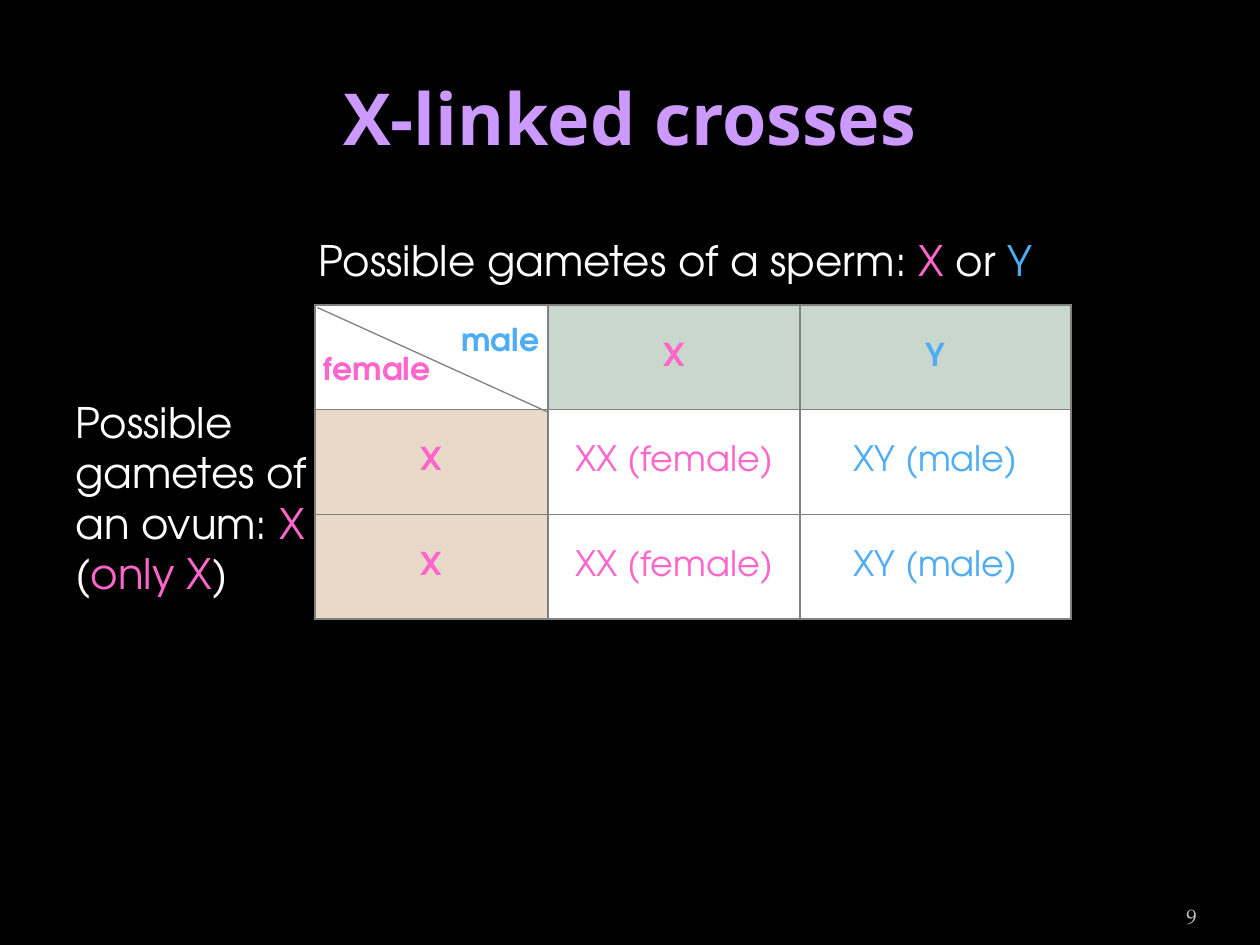
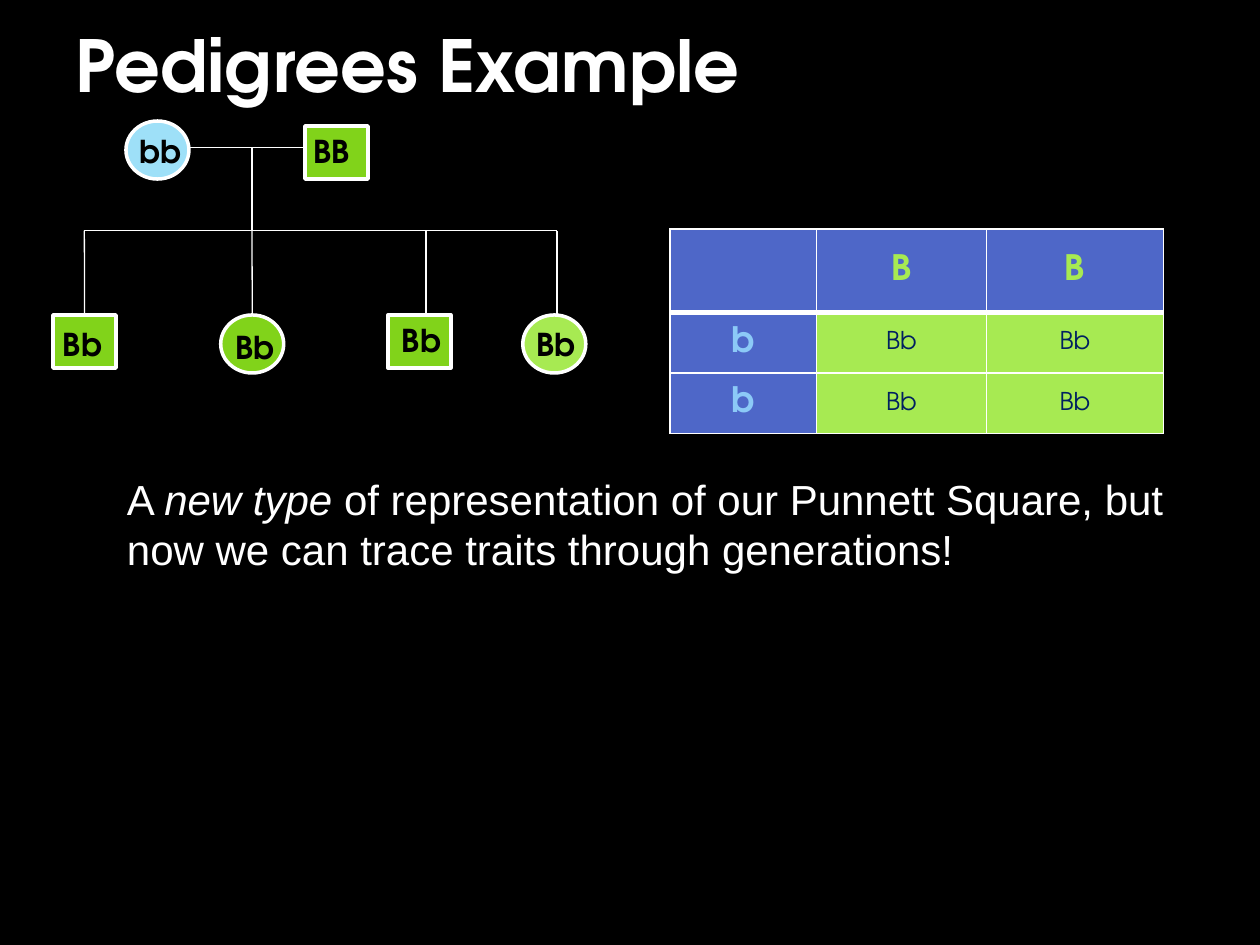
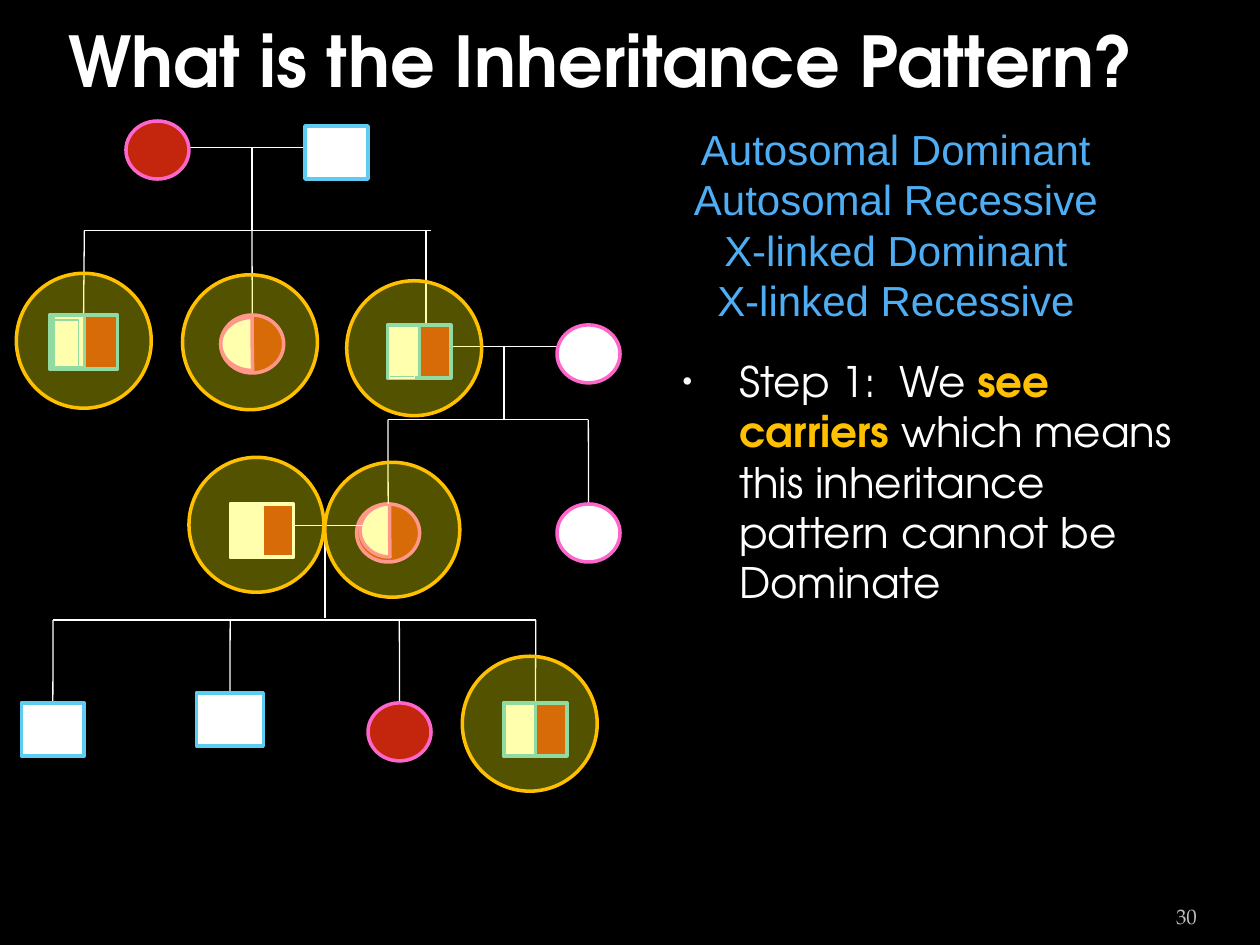
from dataclasses import dataclass

from lxml.etree import SubElement
from pptx import Presentation
from pptx.dml.color import RGBColor
from pptx.enum.shapes import MSO_CONNECTOR, MSO_SHAPE
from pptx.enum.text import MSO_ANCHOR, MSO_AUTO_SIZE, PP_ALIGN
from pptx.oxml.ns import qn
from pptx.shapes.autoshape import Shape
from pptx.shapes.connector import Connector
from pptx.slide import Slide
from pptx.table import Table, _Cell
from pptx.text.text import TextFrame
from pptx.util import Cm, Pt

SANS, SERIF, PLAIN, HEAD = "TeX Gyre Adventor", "TeX Gyre Pagella", "Arial", "Open Sans"
BLACK, WHITE, GRAY, SILVER = "000000", "FFFFFF", "808080", "BDBDBD"
PINK, BLUE, NAVY, LILAC = "FF66CC", "4FADF3", "002060", "CC99FF"
SAGE, SAND, ROYAL, PALE = "CAD7CD", "E9D9C9", "4E67C8", "8CC9F7"
GREEN, LIME, SKY = "81D31A", "A7EA52", "9EE0F8"
RED, CYAN, GOLD, YELLOW = "C3260C", "5ECBF1", "FFC000", "FFFF00"
LEFT, MID, RIGHT = PP_ALIGN.LEFT, PP_ALIGN.CENTER, PP_ALIGN.RIGHT
RECT, OVAL, PIE = MSO_SHAPE.RECTANGLE, MSO_SHAPE.OVAL, MSO_SHAPE.PIE
WIDE, TALL, ROUND = 1.27, 1.07, 1.17
HALF = 0.64
NEAR = 0.05


@dataclass
class Run:
    text: str
    color: str = WHITE
    size: float = 24
    font: str = SANS
    bold: bool = False
    italic: bool = False


@dataclass
class Para:
    runs: list[Run]
    align: PP_ALIGN = LEFT


@dataclass
class Box:
    x: float
    y: float
    w: float
    h: float


@dataclass
class Mark:
    """A symbol of the pedigree."""
    kind: MSO_SHAPE
    x: float
    y: float
    fill: str | None
    edge: str
    w: float = WIDE
    h: float = TALL
    width: float = 2
    alpha: int = 100


@dataclass
class Wire:
    x1: float
    y1: float
    x2: float
    y2: float
    color: str = WHITE


@dataclass
class Cell:
    paras: list[Para]
    fill: str


def rgb(code: str) -> RGBColor:
    return RGBColor.from_string(code)


def cms(box: Box | Mark) -> tuple[Cm, Cm, Cm, Cm]:
    return Cm(box.x), Cm(box.y), Cm(box.w), Cm(box.h)


def write(frame: TextFrame, paras: list[Para]) -> None:
    for i, para in enumerate(paras):
        line = frame.add_paragraph() if i else frame.paragraphs[0]
        line.alignment = para.align
        for part in para.runs:
            run = line.add_run()
            run.text = part.text
            font = run.font
            font.name, font.size = part.font, Pt(part.size)
            font.bold, font.italic = part.bold, part.italic
            font.color.rgb = rgb(part.color)


def add_text(slide: Slide, box: Box, paras: list[Para],
             wrap: bool = True, grow: bool = True) -> TextFrame:
    frame = slide.shapes.add_textbox(*cms(box)).text_frame
    frame.word_wrap = wrap
    if grow:
        frame.auto_size = MSO_AUTO_SIZE.SHAPE_TO_FIT_TEXT
    write(frame, paras)
    return frame


def add_title(slide: Slide, box: Box, para: Para) -> None:
    title = slide.shapes.title
    title.left, title.top, title.width, title.height = cms(box)
    frame = title.text_frame
    frame.auto_size = MSO_AUTO_SIZE.NONE
    frame.vertical_anchor = MSO_ANCHOR.MIDDLE
    write(frame, [para])


def add_number(slide: Slide, text: str) -> None:
    run = Run(text, SILVER, 12, SERIF)
    frame = add_text(slide, Box(22.02, 17.83, 2.11, 1.02), [Para([run], RIGHT)], grow=False)
    frame.margin_left = frame.margin_right = 0
    frame.vertical_anchor = MSO_ANCHOR.BOTTOM


def add_mark(slide: Slide, mark: Mark) -> Shape:
    shape = slide.shapes.add_shape(mark.kind, *cms(mark))
    shape.shadow.inherit = False
    if mark.kind == PIE:
        shape.adjustments[0], shape.adjustments[1] = 53.48, 162
    if mark.fill:
        shape.fill.solid()
        shape.fill.fore_color.rgb = rgb(mark.fill)
    else:
        shape.fill.background()
    if mark.alpha < 100:
        color = shape._element.spPr.find(qn("a:solidFill"))[0]
        SubElement(color, qn("a:alpha")).set("val", str(mark.alpha * 1000))
    shape.line.color.rgb = rgb(mark.edge)
    shape.line.width = Pt(mark.width)
    return shape


def add_wire(slide: Slide, wire: Wire) -> Connector:
    ends = [Cm(v) for v in (wire.x1, wire.y1, wire.x2, wire.y2)]
    line = slide.shapes.add_connector(MSO_CONNECTOR.STRAIGHT, *ends)
    line.line.color.rgb = rgb(wire.color)
    line.line.width = Pt(0.75)
    SubElement(line._element.spPr, qn("a:effectLst"))
    return line


def add_tree(slide: Slide, back: list[Mark], wires: list[Wire], front: list[Mark]) -> None:
    """Draw a pedigree and join each wire that ends at the top middle of a symbol."""
    nodes = [(mark, add_mark(slide, mark)) for mark in back]
    lines = [(wire, add_wire(slide, wire)) for wire in wires]
    nodes += [(mark, add_mark(slide, mark)) for mark in front]
    for wire, line in lines:
        for mark, shape in nodes:
            dx, dy = mark.x + mark.w / 2 - wire.x2, mark.y - wire.y2
            if abs(dx) < NEAR and abs(dy) < NEAR:
                line.end_connect(shape, 0)
                break


def set_edges(cell: _Cell, color: str, top: float, base: float) -> None:
    props = cell._tc.get_or_add_tcPr()
    for i, (side, width) in enumerate((("L", 1), ("R", 1), ("T", top), ("B", base))):
        edge = SubElement(props, qn(f"a:ln{side}"), w=str(Pt(width)))
        fill = SubElement(edge, qn("a:solidFill"))
        SubElement(fill, qn("a:srgbClr"), val=color)
        props.insert(i, edge)


def add_grid(slide: Slide, x: float, y: float, cols: list[float], rows: list[float],
             cells: list[list[Cell]], color: str, rule: float = 1) -> Table:
    """Draw a table; rule is the width of the line under its first row."""
    box = Box(x, y, sum(cols), sum(rows))
    table = slide.shapes.add_table(len(rows), len(cols), *cms(box)).table
    table.first_row = table.horz_banding = False
    for col, width in zip(table.columns, cols):
        col.width = Cm(width)
    for r, (row, high) in enumerate(zip(table.rows, rows)):
        row.height = Cm(high)
        for cell, data in zip(row.cells, cells[r]):
            cell.margin_left = cell.margin_right = Cm(0.18)
            cell.margin_top = cell.margin_bottom = 0
            cell.vertical_anchor = MSO_ANCHOR.MIDDLE
            cell.fill.solid()
            cell.fill.fore_color.rgb = rgb(data.fill)
            set_edges(cell, color, rule if r == 1 else 1, rule if r == 0 else 1)
            write(cell.text_frame, data.paras)
    return table


def set_bullet(frame: TextFrame) -> None:
    props = frame.paragraphs[0]._p.get_or_add_pPr()
    props.set("marL", str(Cm(1.52)))
    props.set("indent", str(Cm(-1.14)))
    SubElement(SubElement(props, qn("a:buClr")), qn("a:srgbClr"), val="F9F9F9")
    SubElement(props, qn("a:buSzPct"), val="65000")
    SubElement(props, qn("a:buFont"), typeface=PLAIN)
    SubElement(props, qn("a:buChar"), char="•")


def word(text: str, color: str, fill: str, size: float, bold: bool = True) -> Cell:
    return Cell([Para([Run(text, color, size, bold=bold)], MID)], fill)


def square(x: float, y: float, fill: str, edge: str = WHITE, w: float = WIDE) -> Mark:
    return Mark(RECT, x, y, fill, edge, w)


def circle(x: float, y: float, fill: str, edge: str = WHITE) -> Mark:
    return Mark(OVAL, x, y, fill, edge, h=ROUND)


def carrier(x: float, y: float, edge: str = CYAN) -> list[Mark]:
    return [square(x, y, RED, edge), square(x, y, WHITE, edge, HALF)]


def drops(y1: float, y2: float, *xs: float) -> list[Wire]:
    return [Wire(x, y1, x, y2) for x in xs]


FAMILY = [
    Wire(5.08, 2.97, 5.08, 4.65),
    Wire(1.7, 4.65, 8.69, 4.65),
    *drops(4.65, 6.35, 1.7, 5.08),
    Wire(8.59, 4.65, 8.59, 6.68),
    Wire(3.38, 2.97, 7.19, 2.97),
]


def crosses(slide: Slide) -> None:
    add_title(slide, Box(1.27, 0.76, 22.86, 3.18),
              Para([Run("X-linked crosses", LILAC, 41, HEAD, True)], MID))
    corner = Cell([Para([Run("male", BLUE, 18, bold=True)], RIGHT),
                   Para([Run("female", PINK, 18, bold=True)])], WHITE)
    child = [word("X", PINK, SAND, 18), word("XX (female)", PINK, WHITE, 20, False),
             word("XY (male)", BLUE, WHITE, 20, False)]
    top = [corner, word("X", PINK, SAGE, 18), word("Y", BLUE, SAGE, 18)]
    add_grid(slide, 6.35, 6.15, [4.7, 5.08, 5.46], [2.11] * 3, [top, child, child], GRAY)
    add_wire(slide, Wire(11.05, 8.31, 6.4, 6.2, GRAY))
    add_number(slide, "9")
    add_text(slide, Box(6.17, 4.6, 15.57, 1.27), [Para([
        Run("Possible gametes of a sperm: "), Run("X", PINK), Run(" or "), Run("Y", BLUE)])])
    add_text(slide, Box(1.27, 7.87, 5.69, 5.38), [Para([
        Run("Possible gametes of an ovum: "), Run("X", PINK), Run(" ("),
        Run("only X", PINK), Run(")")])])


def example(slide: Slide) -> None:
    add_title(slide, Box(1.27, 0.05, 22.86, 2.46),
              Para([Run("Pedigrees Example", size=41, bold=True)]))
    wires = FAMILY + [Wire(8.69, 4.65, 11.23, 4.65), *drops(4.65, 6.45, 11.23)]
    add_tree(slide, [], wires, [
        square(1.07, 6.35, GREEN), square(6.15, 2.54, GREEN), circle(2.54, 2.44, SKY),
        square(7.82, 6.35, GREEN), circle(10.54, 6.35, LIME), circle(4.45, 6.35, GREEN)])
    for text, x, y, w in (("bb", 2.57, 2.54, 1.4), ("BB", 6.07, 2.54, 1.24),
                          ("Bb", 4.5, 6.48, 1.32), ("Bb", 1.02, 6.43, 1.32),
                          ("Bb", 7.85, 6.35, 1.32), ("Bb", 10.57, 6.43, 1.32)):
        add_text(slide, Box(x, y, w, 1.02), [Para([Run(text, BLACK, 18, bold=True)])], wrap=False)
    gene = word("B", LIME, ROYAL, 20)
    child = [word("b", PALE, ROYAL, 20)] + [word("Bb", NAVY, LIME, 14, False)] * 2
    add_grid(slide, 13.51, 4.62, [2.95, 3.43, 3.56], [1.68, 1.22, 1.22],
             [[Cell([], ROYAL), gene, gene], child, child], WHITE, 3)
    add_text(slide, Box(2.31, 9.42, 21.41, 2.31), [Para([
        Run("A ", font=PLAIN), Run("new type ", font=PLAIN, italic=True),
        Run("of representation of our Punnett Square, but now we can trace traits "
            "through generations!", font=PLAIN)])])


def pattern(slide: Slide) -> None:
    add_title(slide, Box(1.12, -0.03, 22.86, 2.46),
              Para([Run("What is the Inheritance Pattern?", size=40, bold=True)]))
    back = [circle(7.19, 10.16, RED, PINK),
            Mark(PIE, 7.26, 10.16, WHITE, PINK, 1.19)]
    wires = FAMILY + [
        Wire(10.16, 6.99, 10.16, 8.46),
        Wire(7.82, 8.46, 11.86, 8.46),
        *drops(8.46, 10.16, 7.82, 11.86),
        Wire(9.09, 6.99, 11.63, 6.99),
        Wire(5.92, 10.59, 7.62, 10.59),
        Wire(6.55, 10.59, 6.55, 12.45),
        Wire(1.07, 12.5, 10.8, 12.5),
        *drops(12.5, 14.17, 1.07, 8.05, 10.8),
        *drops(12.5, 13.97, 4.64),
    ]
    front = [
        circle(2.54, 2.44, RED, PINK), square(6.15, 2.54, WHITE, CYAN),
        Mark(RECT, 1, 6.35, RED, CYAN, 1.37, 1.09), square(1.07, 6.35, WHITE, CYAN, HALF),
        circle(4.45, 6.35, RED, PINK), Mark(PIE, 4.45, 6.4, WHITE, PINK),
        *carrier(7.82, 6.55), circle(11.23, 6.55, WHITE, PINK),
        *carrier(4.65, 10.16, WHITE), circle(11.23, 10.16, WHITE, PINK),
        square(0.43, 14.17, WHITE, CYAN), square(3.96, 13.97, WHITE, CYAN, 1.35),
        circle(7.42, 14.17, RED, PINK), *carrier(10.16, 14.17),
        Mark(RECT, 1.07, 6.45, None, CYAN, 0.51, 1.02, 0.75),
        Mark(RECT, 7.85, 6.6, None, WHITE, 0.51, 1.02, 0.75),
    ]
    add_tree(slide, back, wires, front)
    add_number(slide, "30")
    kinds = ("Autosomal Dominant", "Autosomal Recessive",
             "X-linked Dominant", "X-linked Recessive")
    add_text(slide, Box(13.69, 2.36, 8.74, 4.37),
             [Para([Run(kind, BLUE, font=PLAIN)], MID) for kind in kinds], wrap=False)
    step = add_text(slide, Box(13.13, 7.04, 11.07, 7.19), [Para([
        Run("Step 1:  We "), Run("see carriers ", GOLD, bold=True),
        Run("which means this inheritance pattern cannot be Dominate")])], grow=False)
    set_bullet(step)
    for x, y in ((0.33, 5.51), (3.68, 5.54), (6.99, 5.66),
                 (3.81, 9.22), (6.55, 9.32), (9.32, 13.23)):
        add_mark(slide, Mark(OVAL, x, y, YELLOW, GOLD, 2.72, 2.72, alpha=32))


def main() -> None:
    deck = Presentation()
    deck.slide_width, deck.slide_height = Cm(25.4), Cm(19.05)
    ground = deck.slide_master.background.fill
    ground.solid()
    ground.fore_color.rgb = rgb(BLACK)
    for draw in (crosses, example, pattern):
        draw(deck.slides.add_slide(deck.slide_layouts[5]))
    deck.save("out.pptx")


if __name__ == "__main__":
    main()
